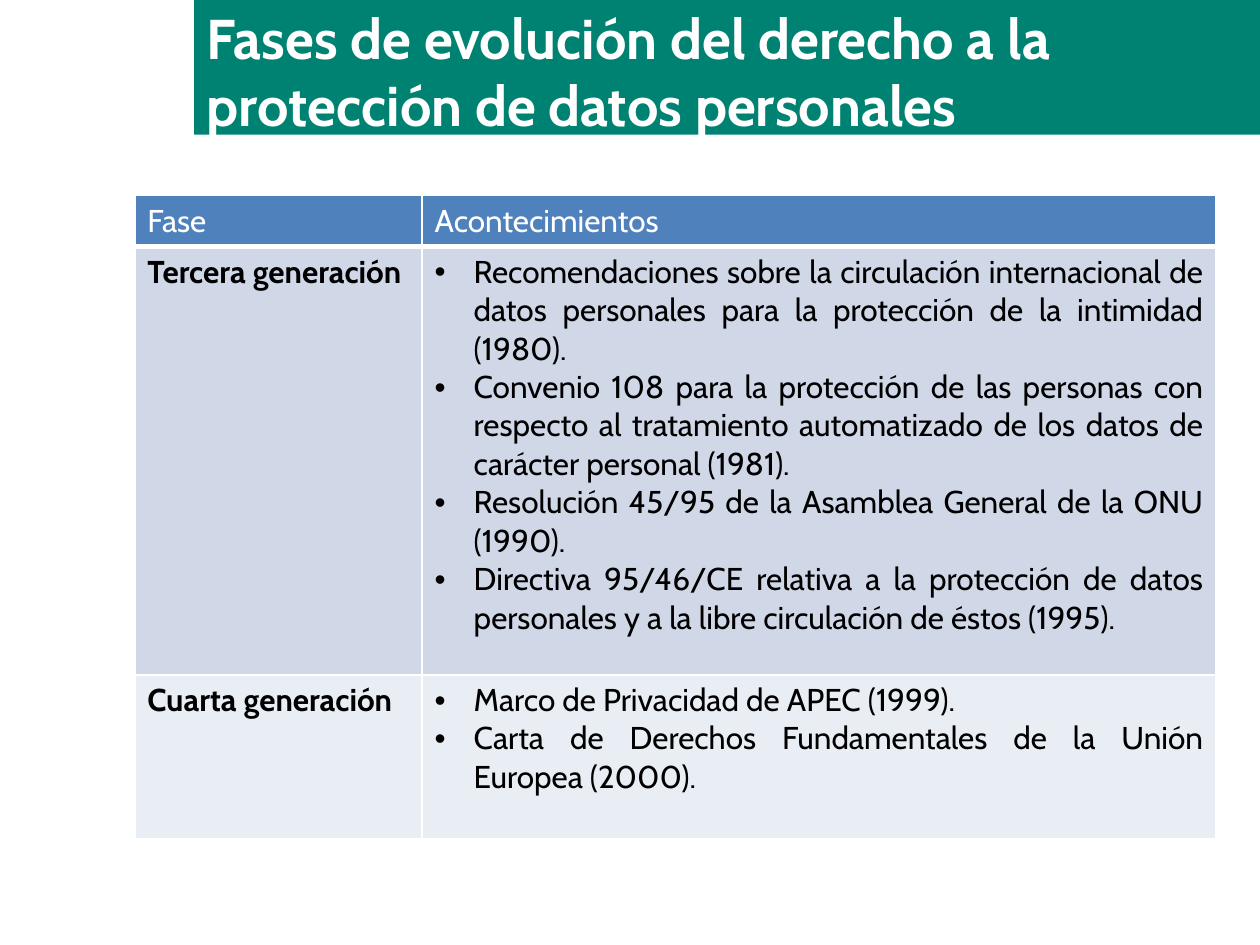
"""Build a slide with the phases of the right to data protection."""
from lxml import etree
from pptx import Presentation
from pptx.dml.color import RGBColor
from pptx.enum.shapes import MSO_SHAPE
from pptx.enum.text import MSO_ANCHOR, MSO_AUTO_SIZE, PP_ALIGN
from pptx.oxml.ns import qn
from pptx.util import Inches, Pt

RECT = MSO_SHAPE.RECTANGLE
MIDDLE = MSO_ANCHOR.MIDDLE
NO_FIT = MSO_AUTO_SIZE.NONE
LEFT, JUSTIFY = PP_ALIGN.LEFT, PP_ALIGN.JUSTIFY

FONT = "Cabin"
COLORS = {
    "band": "008272",
    "header": "4F81BD",
    "odd": "D0D8E8",
    "even": "E9EDF4",
    "white": "FFFFFF",
    "black": "000000",
}
TITLE = "Fases de evolución del derecho a la protección de datos personales"
HEADERS = ["Fase", "Acontecimientos"]
PHASES = [
    ("Tercera generación", [
        "Recomendaciones sobre la circulación internacional de datos "
        "personales para la protección de la intimidad (1980).",
        "Convenio 108 para la protección de las personas con respecto al "
        "tratamiento automatizado de los datos de carácter personal (1981).",
        "Resolución 45/95 de la Asamblea General de la ONU (1990).",
        "Directiva 95/46/CE relativa a la protección de datos personales y "
        "a la libre circulación de éstos (1995).",
    ]),
    ("Cuarta generación", [
        "Marco de Privacidad de APEC (1999).",
        "Carta de Derechos Fundamentales de la Unión Europea (2000).",
    ]),
]
COL_WIDTHS = [2.28, 6.3]
ROW_HEIGHTS = [0.4, 3.4, 1.3]


def rgb(name):
    return RGBColor.from_string(COLORS[name])


def add_run(p, text, size, color, bold=False):
    r = p.add_run()
    r.text = text
    r.font.name = FONT
    r.font.size = Pt(size)
    r.font.bold = bold
    r.font.color.rgb = rgb(color)


def add_band(s):
    sp = s.shapes.add_shape(RECT, Inches(1.54), 0, Inches(8.46), Inches(1.07))
    sp.shadow.inherit = False
    sp.fill.solid()
    sp.fill.fore_color.rgb = rgb("band")
    sp.line.fill.background()
    s.shapes.title.element.addprevious(sp.element)


def set_title(s):
    sp = s.shapes.title
    sp.left, sp.top = Inches(1.54), Inches(-0.03)
    sp.width, sp.height = Inches(8.46), Inches(1.18)
    tf = sp.text_frame
    tf.word_wrap = True
    tf.auto_size = NO_FIT
    tf.vertical_anchor = MIDDLE
    p = tf.paragraphs[0]
    p.alignment = LEFT
    add_run(p, TITLE, 32, "white", bold=True)


def set_bullet(p):
    pPr = p._p.get_or_add_pPr()
    pPr.set("marL", str(Inches(0.31)))
    pPr.set("indent", str(-Inches(0.31)))
    etree.SubElement(pPr, qn("a:buFont")).set("typeface", "Arial")
    etree.SubElement(pPr, qn("a:buChar")).set("char", "•")


def set_borders(cell, bottom):
    tcPr = cell._tc.get_or_add_tcPr()
    for side, width in zip("LRTB", (1, 1, 1, bottom)):
        ln = etree.SubElement(tcPr, qn(f"a:ln{side}"), w=str(Pt(width)))
        fill = etree.SubElement(ln, qn("a:solidFill"))
        etree.SubElement(fill, qn("a:srgbClr"), val=COLORS["white"])


def fill_cell(cell, texts, fill, color="black", bold=False, bullets=False,
              bottom=1):
    set_borders(cell, bottom)
    cell.fill.solid()
    cell.fill.fore_color.rgb = rgb(fill)
    tf = cell.text_frame
    for i, text in enumerate(texts):
        p = tf.add_paragraph() if i else tf.paragraphs[0]
        if bullets:
            set_bullet(p)
            p.alignment = JUSTIFY
        add_run(p, text, 18, color, bold)


def add_phase_table(s):
    frame = s.shapes.add_table(
        len(ROW_HEIGHTS), len(COL_WIDTHS), Inches(1.07), Inches(1.55),
        Inches(sum(COL_WIDTHS)), Inches(sum(ROW_HEIGHTS)))
    table = frame.table
    for col, width in zip(table.columns, COL_WIDTHS):
        col.width = Inches(width)
    for row, height in zip(table.rows, ROW_HEIGHTS):
        row.height = Inches(height)
    for c, text in enumerate(HEADERS):
        fill_cell(table.cell(0, c), [text], "header", "white", bottom=3)
    for r, (phase, events) in enumerate(PHASES, 1):
        fill = "odd" if r % 2 else "even"
        fill_cell(table.cell(r, 0), [phase], fill, bold=True)
        fill_cell(table.cell(r, 1), events, fill, bullets=True)


def main():
    prs = Presentation()
    prs.slide_width, prs.slide_height = Inches(10), Inches(7.5)
    s = prs.slides.add_slide(prs.slide_layouts[5])
    add_band(s)
    set_title(s)
    add_phase_table(s)
    prs.save("out.pptx")


if __name__ == "__main__":
    main()
